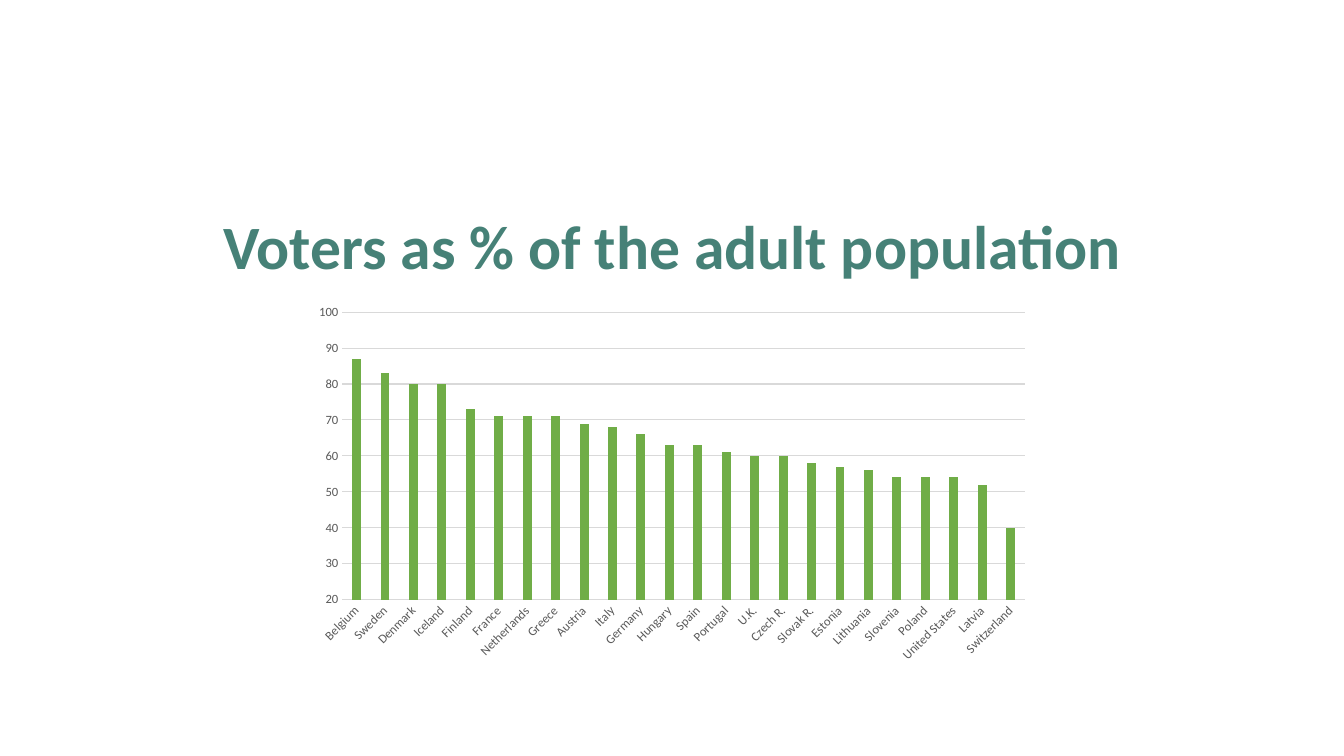
from pptx import Presentation
from pptx.chart.data import CategoryChartData
from pptx.dml.color import RGBColor
from pptx.enum.chart import XL_CHART_TYPE, XL_TICK_MARK
from pptx.enum.text import MSO_ANCHOR, MSO_AUTO_SIZE, PP_ALIGN
from pptx.util import Emu, Pt

COLUMN = XL_CHART_TYPE.COLUMN_CLUSTERED
NO_TICK = XL_TICK_MARK.NONE
BOTTOM = MSO_ANCHOR.BOTTOM
NO_FIT = MSO_AUTO_SIZE.NONE
CENTER = PP_ALIGN.CENTER

SCALE = 9144
FONT = "Calibri"
COLORS = {"title": "468177", "bar": "70AD47", "label": "595959",
          "grid": "D9D9D9", "text": "000000"}

VOTERS = {
    "Belgium": 87, "Sweden": 83, "Denmark": 80, "Iceland": 80,
    "Finland": 73, "France": 71, "Netherlands": 71, "Greece": 71,
    "Austria": 69, "Italy": 68, "Germany": 66, "Hungary": 63,
    "Spain": 63, "Portugal": 61, "U.K.": 60, "Czech R.": 60,
    "Slovak R.": 58, "Estonia": 57, "Lithuania": 56, "Slovenia": 54,
    "Poland": 54, "United States": 54, "Latvia": 52, "Switzerland": 40,
}


def px(size):
    return Emu(size * SCALE)


def color(name):
    return RGBColor.from_string(COLORS[name])


class Deck:
    def __init__(self, width, height):
        self.show = Presentation()
        self.show.slide_width = px(width)
        self.show.slide_height = px(height)
        self.slide = self.show.slides.add_slide(self.show.slide_layouts[5])

    def style(self, font, size, name, bold=False):
        font.name = FONT
        font.size = Pt(size)
        font.bold = bold
        font.color.rgb = color(name)

    def rule(self, line):
        line.color.rgb = color("grid")
        line.width = Pt(0.75)

    def title(self, text, left, top, width, height):
        shape = self.slide.shapes.title
        shape.left, shape.top = px(left), px(top)
        shape.width, shape.height = px(width), px(height)
        frame = shape.text_frame
        frame.text = text
        frame.word_wrap = True
        frame.auto_size = NO_FIT
        frame.vertical_anchor = BOTTOM
        para = frame.paragraphs[0]
        para.alignment = CENTER
        para.line_spacing = 0.9
        self.style(para.font, 44, "title", True)

    def chart(self, name, values, left, top, width, height):
        data = CategoryChartData(number_format="0")
        data.categories = list(values)
        data.add_series(name, list(values.values()))
        chart = self.slide.shapes.add_chart(
            COLUMN, px(left), px(top), px(width), px(height), data).chart
        chart.has_title = False
        chart.has_legend = False
        self.style(chart.font, 10, "text")
        plot = chart.plots[0]
        plot.vary_by_categories = False
        plot.gap_width = 219
        plot.overlap = -27
        fill = plot.series[0].format.fill
        fill.solid()
        fill.fore_color.rgb = color("bar")
        self.axes(chart.category_axis, chart.value_axis)

    def axes(self, cat, val):
        for axis in (cat, val):
            axis.major_tick_mark = NO_TICK
            axis.minor_tick_mark = NO_TICK
            self.style(axis.tick_labels.font, 9, "label")
        self.rule(cat.format.line)
        cat._element.txPr.bodyPr.set("rot", "-2700000")
        val.minimum_scale = 20
        val.maximum_scale = 100
        val.major_unit = 10
        val.has_major_gridlines = True
        self.rule(val.major_gridlines.format.line)
        val.format.line.fill.background()
        val.tick_labels.number_format = "0"
        val.tick_labels.number_format_is_linked = False


def main():
    deck = Deck(1333, 750)
    deck.title("Voters as % of the adult population", 167, 166, 1000, 120)
    deck.chart("Series 1", VOTERS, 302, 295, 729, 370)
    deck.show.save("out.pptx")


if __name__ == "__main__":
    main()
